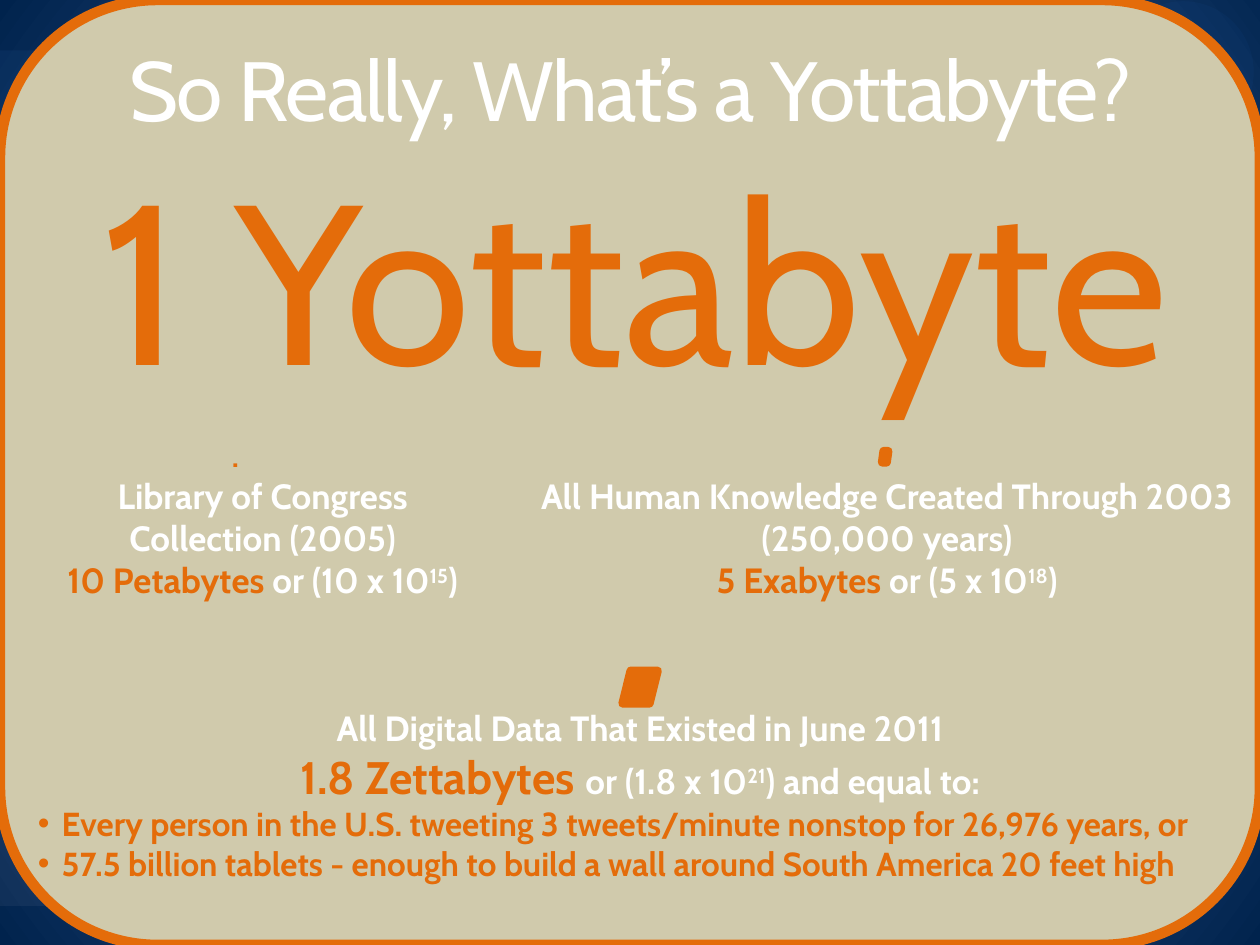
from dataclasses import dataclass

from lxml.etree import SubElement
from pptx import Presentation
from pptx.dml.color import RGBColor
from pptx.enum.shapes import MSO_SHAPE as Kind
from pptx.enum.text import MSO_ANCHOR as Anchor, MSO_AUTO_SIZE as Auto, PP_ALIGN as Align
from pptx.oxml.ns import qn
from pptx.util import Inches, Pt


@dataclass(frozen=True)
class Theme:
    font: str = "Cabin"
    white: str = "FFFFFF"
    accent: str = "E46C0A"
    panel: str = "D0CAAC"
    glow: str = "5E7CC5"
    night: str = "00234D"
    title: int = 48
    hero: int = 130
    dot: int = 24
    large: int = 26
    body: int = 20
    bullet: int = 19


@dataclass(frozen=True)
class Box:
    """An area in grid units: ten columns or rows to the inch."""
    x: float
    y: float
    w: float
    h: float

    def inner(self, x, y, w, h):
        """An area relative to this one, given in shares of it."""
        return Box(self.x + x * self.w, self.y + y * self.h, w * self.w, h * self.h)

    def place(self):
        return [Inches(n / 10) for n in (self.x, self.y, self.w, self.h)]


T = Theme()
PAGE = Box(0, 0, 100, 75)
BLOBS = [  # kind, area, colour, opacity in percent
    (Kind.RECTANGLE, Box(57.5, 0, 42.5, 33.3), "4F81BD", 6),
    (Kind.RECTANGLE, Box(0, 45, 25.8, 26.9), "ACB1BF", 8),
    (Kind.OVAL, Box(69.8, 63.9, 11.1, 11.1), "3989FF", 9),
    (Kind.RECTANGLE, Box(0, 4, 27.5, 26.1), "4A8DEE", 7),
    (Kind.RECTANGLE, Box(14.2, 0, 16.7, 6.7), "B3C1DB", 10),
    (Kind.OVAL, Box(76, 51, 24, 24), "5B7AAF", 8),
    (Kind.RECTANGLE, Box(59.2, 69.2, 16.7, 5.8), "4F81BD", 10),
] + [(Kind.OVAL, Box(x, 0.1, 11.2, 11.2), "3989FF", 4) for x in (32.9, 60.8, 88.3)]


def shape(slide, kind, box, fill, line=None, width=0, alpha=None):
    item = slide.shapes.add_shape(kind, *box.place())
    item.shadow.inherit = False
    item.fill.solid()
    item.fill.fore_color.rgb = RGBColor.from_string(fill)
    if alpha is not None:
        tint = item.element.spPr.find(".//" + qn("a:srgbClr"))
        SubElement(tint, qn("a:alpha"), val=str(alpha * 1000))
    if line:
        item.line.color.rgb = RGBColor.from_string(line)
        item.line.width = Pt(width)
    else:
        item.line.fill.background()
    return item


def style(font, size, color, bold=False):
    font.name, font.size, font.bold = T.font, Pt(size), bold
    font.color.rgb = RGBColor.from_string(color)


def write(para, text, size, color, bold=False, track=0):
    """Fill a centred paragraph with one run in one style."""
    para.alignment = Align.CENTER
    style(para.font, size, color, bold)
    run = para.add_run()
    run.text = text
    if track:
        run._r.get_or_add_rPr().set("spc", str(track))


def amount(para, label, power, tail, size=T.body):
    """Write a coloured amount, then its value with a raised exponent."""
    base, digits = power
    para.alignment = Align.CENTER
    style(para.font, T.body, T.white, True)
    for text in (label, base, digits, tail):
        run = para.add_run()
        run.text = text
        if text == label:
            style(run.font, size, T.accent, True)
        elif text == digits:
            run._r.get_or_add_rPr().set("baseline", "30000")


def text_box(slide, box):
    frame = slide.shapes.add_textbox(*box.place()).text_frame
    frame.word_wrap = True
    return frame


def indent(para, left, first):
    para.space_before = Pt(0)
    props = para._p.get_or_add_pPr()
    props.set("marL", str(Inches(left)))
    props.set("indent", str(Inches(first)))
    return props


def plain(para):
    """Turn off the bullet, indent and gap of the body placeholder."""
    SubElement(indent(para, 0, 0), qn("a:buNone"))


def bullet(para, text):
    props = indent(para, 0.31, -0.19)
    tint = SubElement(props, qn("a:buClr"))
    SubElement(tint, qn("a:srgbClr"), val=T.accent)
    SubElement(props, qn("a:buFont"), typeface="Arial")
    SubElement(props, qn("a:buChar"), char="•")
    write(para, text, T.bullet, T.accent, True)
    para.alignment = Align.LEFT


def backdrop(slide, box):
    fill = slide.background.fill
    fill.gradient()
    for stop, color in zip(fill.gradient_stops, (T.glow, T.night)):
        stop.color.rgb = RGBColor.from_string(color)
    grad = slide.element.find(".//" + qn("a:gradFill"))
    grad.remove(grad.find(qn("a:lin")))
    ring = SubElement(grad, qn("a:path"), {"path": "circle"})
    SubElement(ring, qn("a:fillToRect"), {side: "50000" for side in "ltrb"})
    for kind, area, color, alpha in BLOBS:
        shape(slide, kind, area, color, alpha=alpha)
    shape(slide, Kind.ROUNDED_RECTANGLE, box, T.panel, T.accent, 6)


def heading(slide, box):
    title = slide.shapes.title
    title.left, title.top, title.width, title.height = box.place()
    slide.shapes.element.append(title.element)
    frame = title.text_frame
    frame.auto_size, frame.vertical_anchor = Auto.NONE, Anchor.BOTTOM
    para = frame.paragraphs[0]
    para.line_spacing = 0.9
    write(para, "So Really, What’s a Yottabyte?", T.title, T.white, track=-100)


def hero(slide, box):
    frame = shape(slide, Kind.RECTANGLE, box, T.panel).text_frame
    frame.word_wrap, frame.vertical_anchor = True, Anchor.MIDDLE
    para = frame.paragraphs[0]
    para.line_spacing = 0.85
    write(para, "1 Yottabyte", T.hero, T.accent, track=50)


def mark(slide, box):
    shape(slide, Kind.PARALLELOGRAM, box, T.accent, T.accent, 4.72)


def fact(slide, box, text, label, power):
    frame = text_box(slide, box)
    write(frame.paragraphs[0], text, T.body, T.white, True)
    amount(frame.add_paragraph(), label, power, ")")


def digital(slide, box):
    mark(slide, box.inner(0.486, -0.13, 0.028, 0.143))
    body = slide.placeholders[1]
    body.left, body.top, body.width, body.height = box.place()
    slide.shapes.element.append(body.element)
    frame = body.text_frame
    frame.auto_size = Auto.NONE
    first, second = frame.paragraphs[0], frame.add_paragraph()
    plain(first)
    write(first, "All Digital Data That Existed in June 2011", T.body, T.white, True)
    plain(second)
    amount(second, "1.8 Zettabytes ", ("or (1.8 x 10", "21"), ") and equal to:", T.large)
    for text in (
        "Every person in the U.S. tweeting 3 tweets/minute nonstop for 26,976 years, or",
        "57.5 billion tablets - enough to build a wall around South America 20 feet high",
    ):
        bullet(frame.add_paragraph(), text)


def main():
    deck = Presentation()
    deck.slide_width, deck.slide_height = PAGE.place()[2:]
    slide = deck.slides.add_slide(deck.slide_layouts[1])
    backdrop(slide, PAGE)
    hero(slide, Box(3.3, 13.7, 94.2, 19.6))
    mark(slide, Box(70, 35.8, 0.5, 0.9))
    dot = text_box(slide, Box(17.1, 33.3, 3.2, 5))
    write(dot.paragraphs[0], ".", T.dot, T.accent)
    fact(slide, Box(2.5, 37.2, 36.7, 11.1), "Library of Congress Collection (2005)",
         "10 Petabytes", (" or (10 x 10", "15"))
    digital(slide, Box(0.8, 55.6, 100, 18.2))
    heading(slide, Box(1.7, -1.1, 96.7, 12.7))
    fact(slide, Box(40.8, 37.2, 59.2, 11.1),
         "All Human Knowledge Created Through 2003 (250,000 years)",
         "5 Exabytes", (" or (5 x 10", "18"))
    deck.save("out.pptx")


if __name__ == "__main__":
    main()
